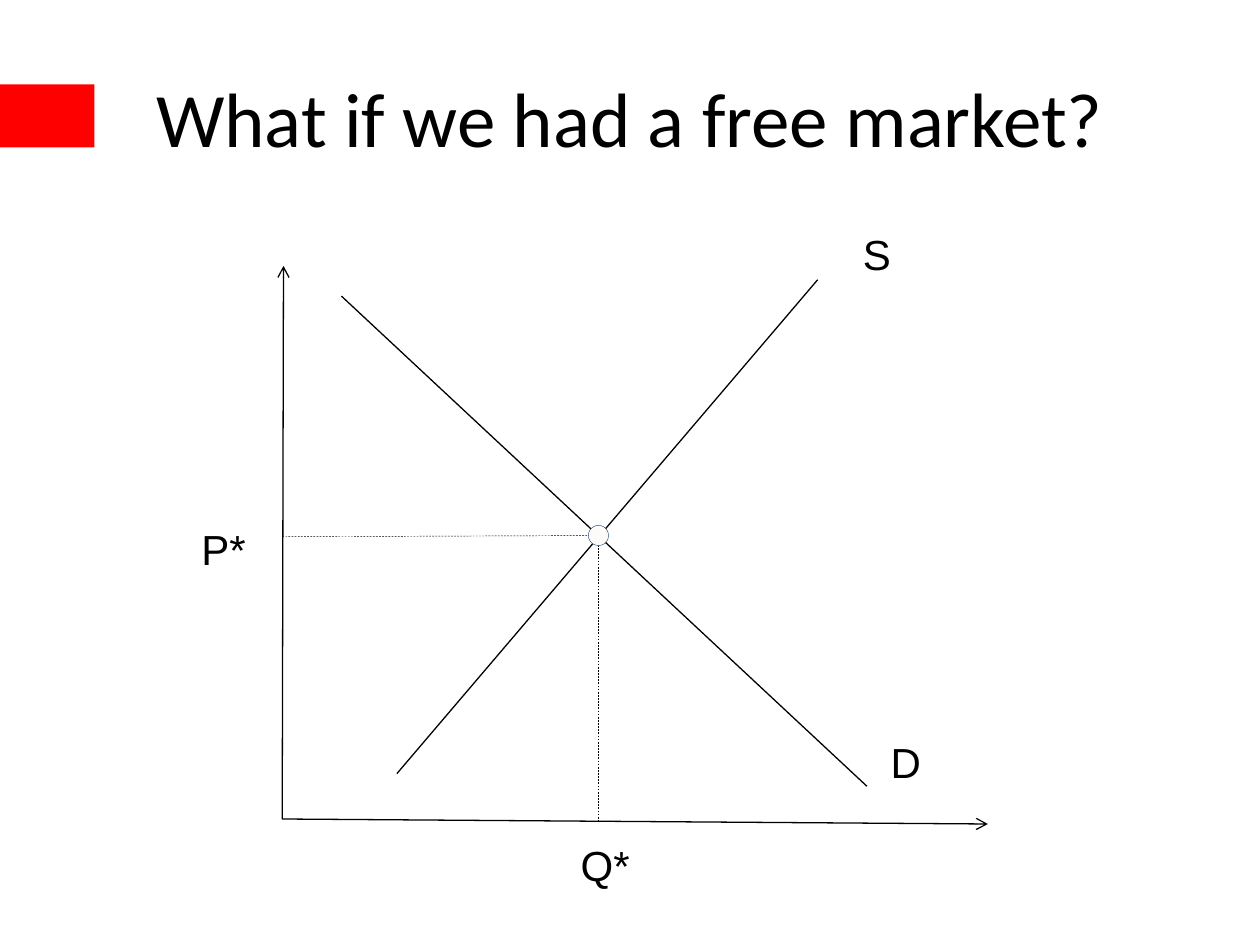
import lxml.etree
import pptx
import pptx.dml.color
import pptx.enum.dml
import pptx.enum.shapes
import pptx.enum.text
import pptx.oxml.ns
import pptx.util

Inches = pptx.util.Inches
Pt = pptx.util.Pt
Shapes = pptx.enum.shapes.MSO_SHAPE
Anchor = pptx.enum.text.MSO_ANCHOR
Align = pptx.enum.text.PP_ALIGN

COLORS = {"ink": "000000", "accent": "FF0000", "point": "FCFBF9", "outline": "1F497D"}

TITLE_FONT = {"name": "Calibri", "size": Pt(44)}
LABEL_FONT = {"name": "Arial", "size": Pt(24)}
LABEL_PARAGRAPH = {"line_spacing": 0.8}
TITLE_PARAGRAPH = {"alignment": Align.CENTER}

# Diagram geometry in inches
ORIGIN = (2.24, 6.5)
AXES = [(7.84, 6.54), (2.25, 2.11)]
CURVES = [((6.88, 6.24), (2.71, 2.35)), ((3.15, 6.14), (6.49, 2.22))]
GUIDES = [((4.75, 4.3), (4.75, 6.51)), ((2.24, 4.26), (4.84, 4.25))]
LABELS = [
    ("P*", 1.5, 4.18, 0.56),
    ("Q*", 4.51, 6.69, 0.59),
    ("S", 6.75, 1.84, 0.43),
    ("D", 6.97, 5.87, 0.45),
]


def rgb(name):
    return pptx.dml.color.RGBColor.from_string(COLORS[name])


def set_attributes(target, values):
    for name, value in values.items():
        setattr(target, name, value)


def add_text(slide, text, box, font, paragraph_format, wrap, anchor):
    shape = slide.shapes.add_textbox(*map(Inches, box))
    set_attributes(shape.text_frame, {"word_wrap": wrap, "vertical_anchor": anchor})
    paragraph = shape.text_frame.paragraphs[0]
    set_attributes(paragraph, paragraph_format)
    run = paragraph.add_run()
    run.text = text
    set_attributes(run.font, font)
    run.font.color.rgb = rgb("ink")


def add_shape(slide, kind, box, fill, outline=None):
    shape = slide.shapes.add_shape(kind, *map(Inches, box))
    shape.shadow.inherit = False
    shape.fill.solid()
    shape.fill.fore_color.rgb = rgb(fill)
    if outline:
        shape.line.color.rgb = rgb(outline)
        shape.line.width = Pt(0.25)
    else:
        shape.line.fill.background()


def add_line(slide, start, end, width=0.75, dashed=False, arrow=False):
    connector = slide.shapes.add_connector(
        pptx.enum.shapes.MSO_CONNECTOR.STRAIGHT, *map(Inches, (*start, *end)))
    connector.line.color.rgb = rgb("ink")
    connector.line.width = Pt(width)
    if dashed:
        connector.line.dash_style = pptx.enum.dml.MSO_LINE.DASH
    properties = connector._element.spPr
    if arrow:
        outline = properties.find(pptx.oxml.ns.qn("a:ln"))
        lxml.etree.SubElement(outline, pptx.oxml.ns.qn("a:tailEnd"), type="arrow")
    lxml.etree.SubElement(properties, pptx.oxml.ns.qn("a:effectLst"))


def main():
    presentation = pptx.Presentation()
    presentation.slide_width = Inches(10)
    presentation.slide_height = Inches(7.5)
    slide = presentation.slides.add_slide(presentation.slide_layouts[6])

    # Title and accent bar
    add_shape(slide, Shapes.RECTANGLE, (0, 0.67, 0.75, 0.5), "accent")
    add_text(slide, "What if we had a free market?", (0.5, 0.3, 9, 1.25),
             TITLE_FONT, TITLE_PARAGRAPH, True, Anchor.MIDDLE)

    # Supply and demand diagram
    for start, end in CURVES:
        add_line(slide, start, end)
    for end in AXES:
        add_line(slide, ORIGIN, end, arrow=True)
    for start, end in GUIDES:
        add_line(slide, start, end, width=0.25, dashed=True)

    # Equilibrium point
    add_shape(slide, Shapes.OVAL, (4.67, 4.17, 0.16, 0.16), "point", "outline")

    # Labels
    for text, left, top, width in LABELS:
        add_text(slide, text, (left, top, width, 0.42),
                 LABEL_FONT, LABEL_PARAGRAPH, False, Anchor.TOP)

    presentation.save("out.pptx")


if __name__ == "__main__":
    main()
